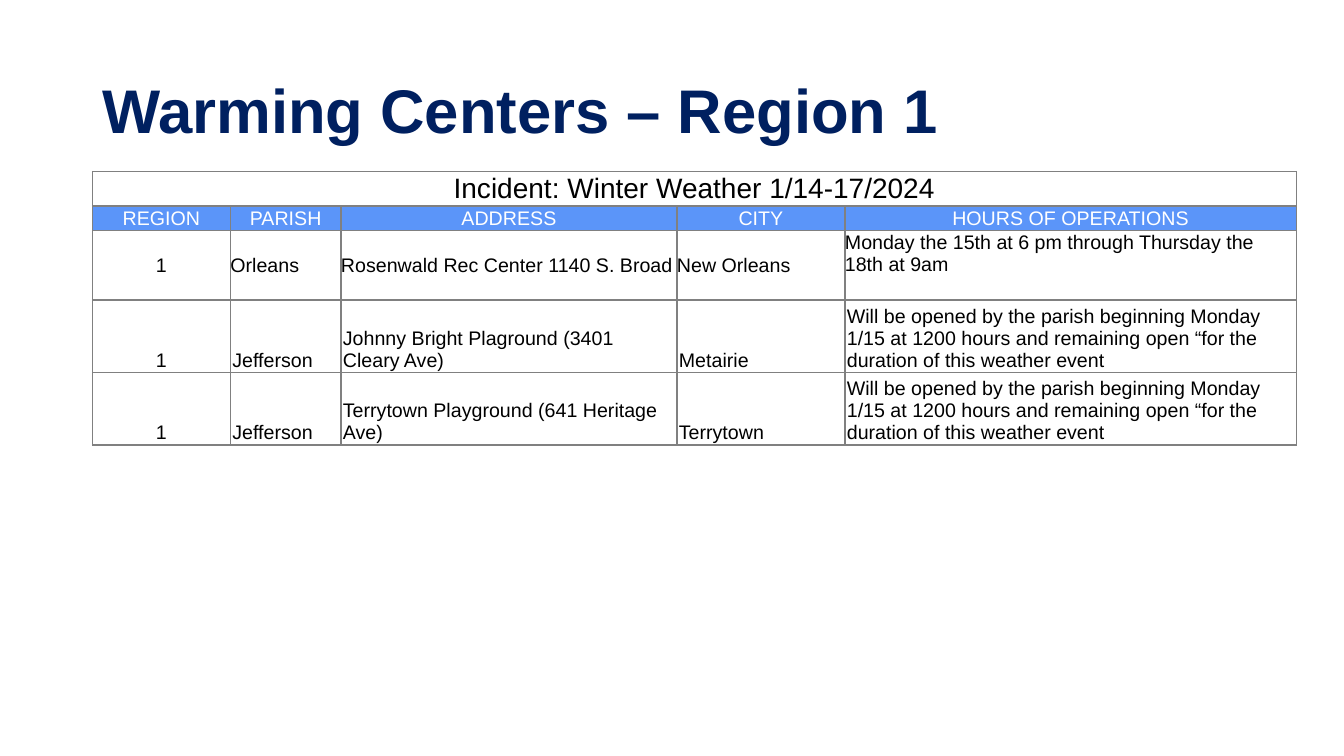
from dataclasses import dataclass

from lxml import etree
from pptx import Presentation
from pptx.dml.color import RGBColor
from pptx.enum.text import MSO_ANCHOR, PP_ALIGN
from pptx.oxml.ns import qn
from pptx.util import Pt

LEFT, CENTER = PP_ALIGN.LEFT, PP_ALIGN.CENTER
MIDDLE, BOTTOM = MSO_ANCHOR.MIDDLE, MSO_ANCHOR.BOTTOM

FONT = "Arial"
NAVY, BLUE, GRAY = "002060", "5B95F9", "808080"
BLACK, WHITE = "000000", "FFFFFF"

WIDTHS = [98.6, 79, 240, 120, 322.4]
HEADS = ["REGION", "PARISH", "ADDRESS", "CITY", "HOURS OF OPERATIONS"]
LATER = ("Will be opened by the parish beginning Monday 1/15 at 1200 hours "
         "and remaining open “for the duration of this weather event")


@dataclass
class Style:
    size: float = 14
    color: str = BLACK
    fill: str = WHITE
    anchor: int = MIDDLE
    side: float = 0
    top: float = 0
    base: float = 0


@dataclass
class Row:
    texts: list[str]
    height: float
    style: Style
    aligns: list[int]


HEAD = Style(color=WHITE, fill=BLUE, side=0.7, top=0.7)
SITE = Style(anchor=BOTTOM, side=1.4, top=0.7, base=0.7)
MIXED = [CENTER] + [LEFT] * 4

ROWS = [
    Row(["Incident: Winter Weather 1/14-17/2024"], 23,
        Style(size=20, side=0.7, top=0.7), [CENTER]),
    Row(HEADS, 17.3, HEAD, [CENTER] * 5),
    Row(["1", "Orleans", "Rosenwald Rec Center 1140 S. Broad", "New Orleans",
         "Monday the 15th at 6 pm through Thursday the 18th at 9am"],
        47.7, Style(), MIXED),
    Row(["1", "Jefferson", "Johnny Bright Plaground (3401 Cleary Ave)",
         "Metairie", LATER], 49.2, SITE, MIXED),
    Row(["1", "Jefferson", "Terrytown Playground (641 Heritage Ave)",
         "Terrytown", LATER], 49.2, SITE, MIXED),
]


def rgb(code: str) -> RGBColor:
    return RGBColor.from_string(code)


def write(frame, text: str, size: float, color: str, bold: bool = False) -> None:
    frame.text = text
    font = frame.paragraphs[0].runs[0].font
    font.name, font.size, font.bold = FONT, Pt(size), bold
    font.color.rgb = rgb(color)


def edge(cell) -> None:
    """Rule all four sides of a cell; call before setting its fill."""
    props = cell._tc.get_or_add_tcPr()
    for side in ("a:lnL", "a:lnR", "a:lnT", "a:lnB"):
        line = etree.SubElement(props, qn(side), w=str(Pt(1)))
        solid = etree.SubElement(line, qn("a:solidFill"))
        etree.SubElement(solid, qn("a:srgbClr"), val=GRAY)


def dress(cell, style: Style) -> None:
    edge(cell)
    cell.fill.solid()
    cell.fill.fore_color.rgb = rgb(style.fill)
    cell.vertical_anchor = style.anchor
    cell.margin_left = cell.margin_right = Pt(style.side)
    cell.margin_top, cell.margin_bottom = Pt(style.top), Pt(style.base)


def add_title(slide) -> None:
    box = slide.shapes.add_textbox(Pt(66), Pt(28.8), Pt(828), Pt(104.4))
    frame = box.text_frame
    frame.word_wrap = True
    frame.vertical_anchor = MIDDLE
    write(frame, "Warming Centers – Region 1", 44, NAVY, True)
    frame.paragraphs[0].line_spacing = 0.9


def add_sites(slide) -> None:
    high = sum(row.height for row in ROWS)
    grid = slide.shapes.add_table(len(ROWS), len(WIDTHS), Pt(66), Pt(122.4),
                                  Pt(sum(WIDTHS)), Pt(high)).table
    grid.first_row = grid.horz_banding = False
    for col, width in zip(grid.columns, WIDTHS):
        col.width = Pt(width)
    for line, row in zip(grid.rows, ROWS):
        line.height = Pt(row.height)
        for cell in line.cells:
            dress(cell, row.style)
        for cell, text, align in zip(line.cells, row.texts, row.aligns):
            write(cell.text_frame, text, row.style.size, row.style.color)
            cell.text_frame.paragraphs[0].alignment = align
    grid.cell(0, 0).merge(grid.cell(0, len(WIDTHS) - 1))
    # Lift the Orleans hours one line above the middle of the row
    grid.cell(2, 4).margin_bottom = Pt(16)


def main() -> None:
    deck = Presentation()
    deck.slide_width, deck.slide_height = Pt(960), Pt(540)
    slide = deck.slides.add_slide(deck.slide_layouts[6])
    add_title(slide)
    add_sites(slide)
    deck.save("out.pptx")


if __name__ == "__main__":
    main()
